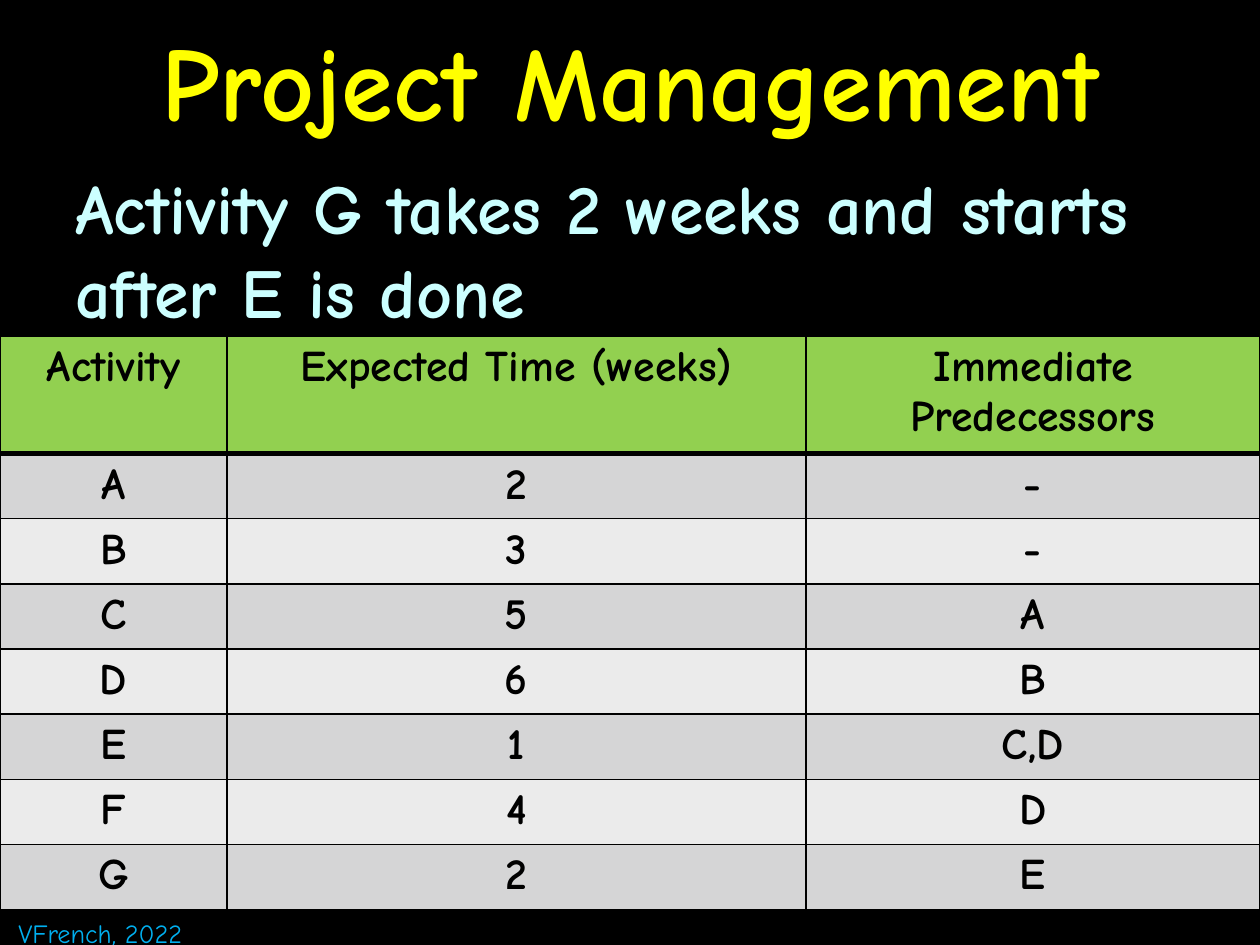
from lxml import etree
from pptx import Presentation
from pptx.dml.color import RGBColor
from pptx.enum import text
from pptx.oxml import ns
from pptx import util as u

PX = u.Inches(1) // 126
FONT = "Comic Neue"
HEADERS = ["Activity", "Expected Time (weeks)", "Immediate\nPredecessors"]
ACTIVITIES = [
    ("A", "2", "-"),
    ("B", "3", "-"),
    ("C", "5", "A"),
    ("D", "6", "B"),
    ("E", "1", "C,D"),
    ("F", "4", "D"),
    ("G", "2", "E"),
]
TITLE = dict(size=60, bold=True, color="FFFF00")
BODY = dict(size=40, bold=True, color="CCFFFF")
CELL = dict(size=25, bold=True, color="000000")
FOOTER = dict(size=15, bold=False, color="00B0F0")


def rgb(value):
    return RGBColor.from_string(value)


class SlideBuilder:
    def __init__(self, slide):
        self.s = slide

    def background(self, color):
        fill = self.s.background.fill
        fill.solid()
        fill.fore_color.rgb = rgb(color)

    def fill_frame(self, tf, content, style, align, before=0):
        """Fill a text frame, one paragraph per line of content."""
        for i, line in enumerate(content.split("\n")):
            p = tf.paragraphs[0] if i == 0 else tf.add_paragraph()
            p.alignment = align
            p.space_before = u.Pt(before)
            r = p.add_run()
            r.text = line
            values = dict(name=FONT, size=u.Pt(style["size"]), bold=style["bold"])
            for key, value in values.items():
                setattr(r.font, key, value)
            r.font.color.rgb = rgb(style["color"])

    def text(self, box, content, style, align=text.PP_ALIGN.LEFT,
             anchor=text.MSO_ANCHOR.TOP, before=0):
        sp = self.s.shapes.add_textbox(*(n * PX for n in box))
        tf = sp.text_frame
        tf.word_wrap = True
        tf.vertical_anchor = anchor
        self.fill_frame(tf, content, style, align, before)

    def border(self, cell, width_by_side):
        tc_pr = cell._tc.get_or_add_tcPr()
        for i, (side, width) in enumerate(width_by_side.items()):
            ln = etree.Element(ns.qn(f"a:ln{side}"), w=str(u.Pt(width)))
            fill = etree.SubElement(ln, ns.qn("a:solidFill"))
            etree.SubElement(fill, ns.qn("a:srgbClr"), val="000000")
            tc_pr.insert(i, ln)

    def table(self, box, rows, widths, heights, header_fill, bands):
        frame = self.s.shapes.add_table(len(rows), len(widths), *(n * PX for n in box))
        table = frame.table
        for column, width in zip(table.columns, widths):
            column.width = width * PX
        for i, (row, height) in enumerate(zip(table.rows, heights)):
            row.height = height * PX
            for cell, content in zip(row.cells, rows[i]):
                cell.fill.solid()
                color = bands[(i - 1) % 2] if i else header_fill
                cell.fill.fore_color.rgb = rgb(color)
                self.fill_frame(cell.text_frame, content, CELL, text.PP_ALIGN.CENTER)
                self.border(cell, dict(L=1, R=1, T=3 if i == 1 else 1,
                                       B=1 if i else 3))


def main():
    prs = Presentation()
    prs.slide_width, prs.slide_height = 1260 * PX, 945 * PX
    page = SlideBuilder(prs.slides.add_slide(prs.slide_layouts[6]))
    page.background("000000")
    page.text((0, 0, 1260, 158), "Project Management", TITLE,
              text.PP_ALIGN.CENTER, text.MSO_ANCHOR.MIDDLE)
    page.text((63, 158, 1134, 777),
              "Activity G takes 2 weeks and starts after E is done", BODY, before=8)
    heights = [113] + [62] * len(ACTIVITIES)
    page.table((0, 336, 1260, sum(heights)), [HEADERS, *ACTIVITIES],
               [227, 579, 454], heights, "92D050", ["D5D5D6", "EBEBEB"])
    page.text((6, 911, 214, 44), "VFrench, 2022", FOOTER)
    prs.save("out.pptx")


if __name__ == "__main__":
    main()
